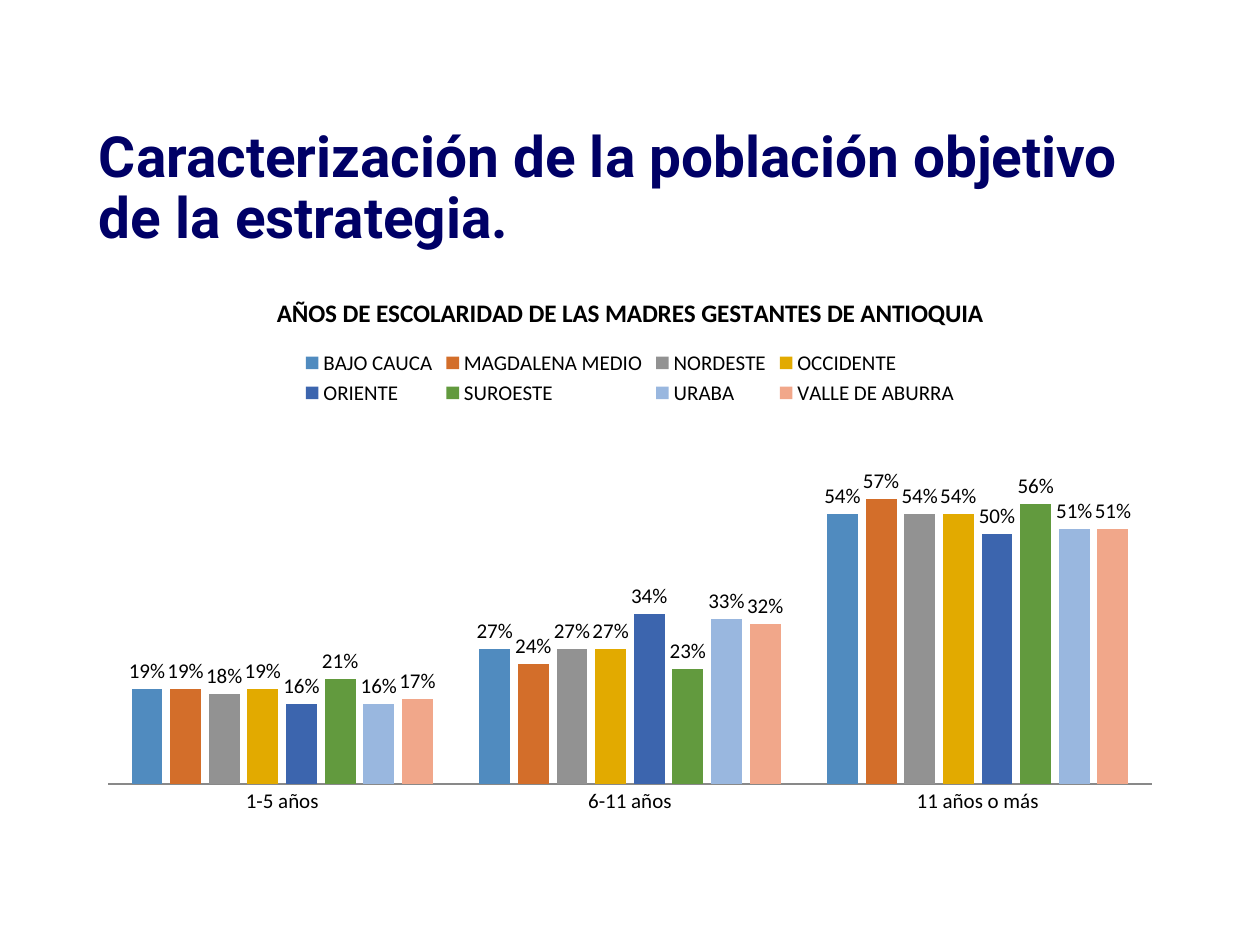
import pptx
import pptx.util
import pptx.chart.data
import pptx.dml.color
import pptx.enum.chart
import pptx.enum.text
import pptx.oxml

Pt = pptx.util.Pt
RGBColor = pptx.dml.color.RGBColor

NAVY = RGBColor(0x00, 0x00, 0x66)
BLACK = RGBColor(0x00, 0x00, 0x00)
AXIS_GRAY = RGBColor(0x89, 0x89, 0x89)
BLUE = RGBColor(0x50, 0x8B, 0xBF)
ORANGE = RGBColor(0xD3, 0x6E, 0x2A)
GRAY = RGBColor(0x92, 0x92, 0x92)
GOLD = RGBColor(0xE2, 0xAA, 0x00)
DARK_BLUE = RGBColor(0x3C, 0x65, 0xAE)
GREEN = RGBColor(0x62, 0x9A, 0x3E)
LIGHT_BLUE = RGBColor(0x99, 0xB7, 0xDF)
SALMON = RGBColor(0xF1, 0xA7, 0x8A)

AGE_GROUPS = ["1-5 años", "6-11 años", "11 años o más"]
REGIONS = [
    ("BAJO CAUCA", (0.19, 0.27, 0.54), BLUE),
    ("MAGDALENA MEDIO", (0.19, 0.24, 0.57), ORANGE),
    ("NORDESTE", (0.18, 0.27, 0.54), GRAY),
    ("OCCIDENTE", (0.19, 0.27, 0.54), GOLD),
    ("ORIENTE", (0.16, 0.34, 0.50), DARK_BLUE),
    ("SUROESTE", (0.21, 0.23, 0.56), GREEN),
    ("URABA", (0.16, 0.33, 0.51), LIGHT_BLUE),
    ("VALLE DE ABURRA", (0.17, 0.32, 0.51), SALMON),
]


def set_font(font, name, size, color, bold=False):
    font.name = name
    font.size = Pt(size)
    font.bold = bold
    font.color.rgb = color


def add_title(s, left, top, width, height):
    tf = s.shapes.add_textbox(Pt(left), Pt(top), Pt(width), Pt(height)).text_frame
    tf.word_wrap = True
    tf.vertical_anchor = pptx.enum.text.MSO_ANCHOR.MIDDLE
    tf.text = "Caracterización de la población objetivo de la estrategia."
    p = tf.paragraphs[0]
    p.line_spacing = 0.9
    set_font(p.runs[0].font, "Roboto", 32.4, NAVY, True)


def set_plot_layout(chart, x, y, w, h):
    plot_area = chart.plots[0]._element.getparent()
    for old in plot_area.findall(pptx.oxml.ns.qn("c:layout")):
        plot_area.remove(old)
    sizes = "".join(
        f'<c:{tag} val="{value}"/>' for tag, value in zip("xywh", (x, y, w, h))
    )
    plot_area.insert(0, pptx.oxml.parse_xml(
        f'<c:layout {pptx.oxml.ns.nsdecls("c")}><c:manualLayout>'
        '<c:layoutTarget val="inner"/><c:xMode val="edge"/><c:yMode val="edge"/>'
        f'{sizes}</c:manualLayout></c:layout>'
    ))


def add_schooling_chart(s, left, top, width, height):
    data = pptx.chart.data.CategoryChartData(number_format="0%")
    data.categories = AGE_GROUPS
    for name, values, _ in REGIONS:
        data.add_series(name, values)
    chart = s.shapes.add_chart(
        pptx.enum.chart.XL_CHART_TYPE.COLUMN_CLUSTERED,
        Pt(left), Pt(top), Pt(width), Pt(height), data,
    ).chart
    set_font(chart.font, "Calibri", 12, BLACK)

    chart.has_title = True
    tf = chart.chart_title.text_frame
    tf.text = "AÑOS DE ESCOLARIDAD DE LAS MADRES GESTANTES DE ANTIOQUIA"
    set_font(tf.paragraphs[0].runs[0].font, "Calibri", 14.4, BLACK, True)

    chart.has_legend = True
    chart.legend.position = pptx.enum.chart.XL_LEGEND_POSITION.TOP
    chart.legend.include_in_layout = False
    set_font(chart.legend.font, "Calibri", 12, BLACK)

    no_tick = pptx.enum.chart.XL_TICK_MARK.NONE
    chart.category_axis.major_tick_mark = no_tick
    chart.category_axis.format.line.color.rgb = AXIS_GRAY
    value_axis = chart.value_axis
    value_axis.minimum_scale = 0
    value_axis.maximum_scale = 1
    value_axis.has_major_gridlines = False
    value_axis.visible = False

    plot = chart.plots[0]
    plot.vary_by_categories = False
    plot.gap_width = 150
    plot.overlap = -25
    for series, (_, _, color) in zip(plot.series, REGIONS):
        series.format.fill.solid()
        series.format.fill.fore_color.rgb = color
        labels = series.data_labels
        labels.show_value = True
        labels.number_format = "0%"
        labels.number_format_is_linked = False
        labels.position = pptx.enum.chart.XL_LABEL_POSITION.OUTSIDE_END
        set_font(labels.font, "Calibri", 12, BLACK)
    set_plot_layout(chart, 0.02, 0.02, 0.96, 0.89)


def main():
    prs = pptx.Presentation()
    prs.slide_width = Pt(720)
    prs.slide_height = Pt(540)
    s = prs.slides.add_slide(prs.slide_layouts[6])
    add_title(s, 49.5, 70, 621, 77)
    add_schooling_chart(s, 49.5, 156, 621, 321)
    prs.save("out.pptx")


if __name__ == "__main__":
    main()
